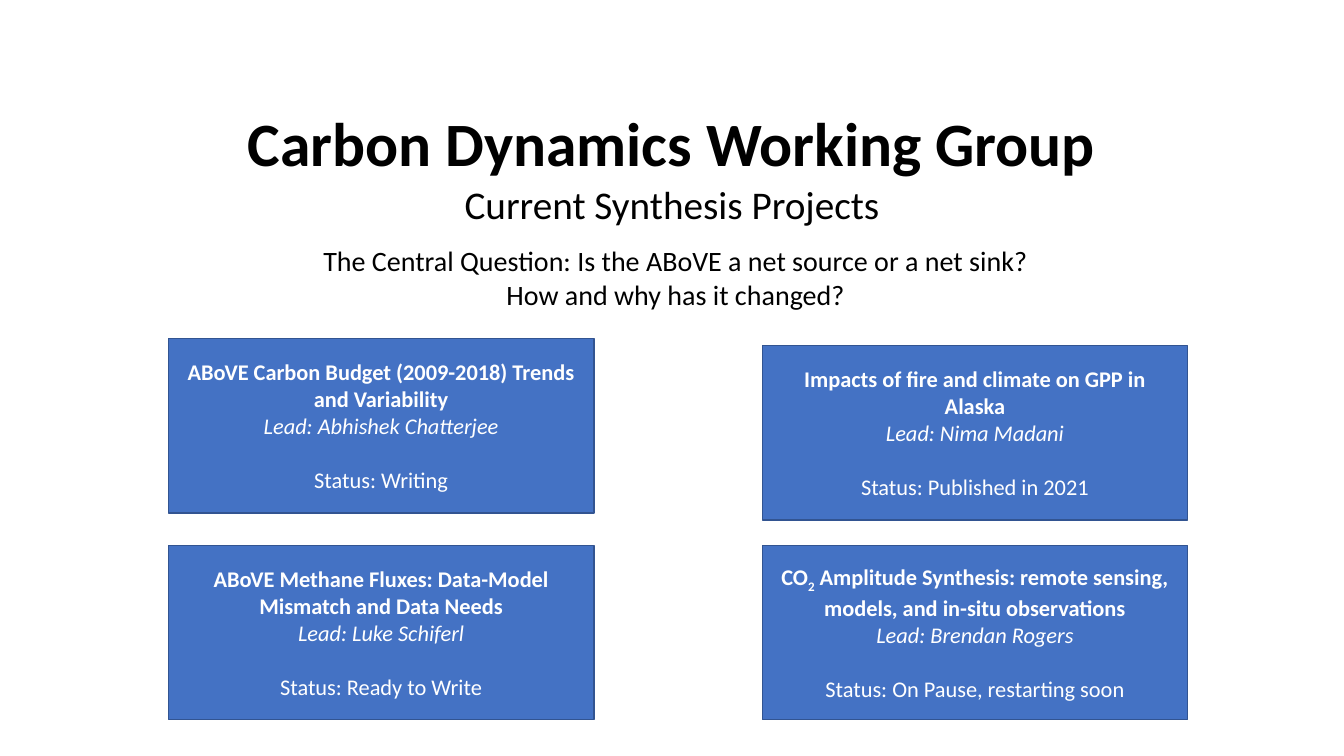
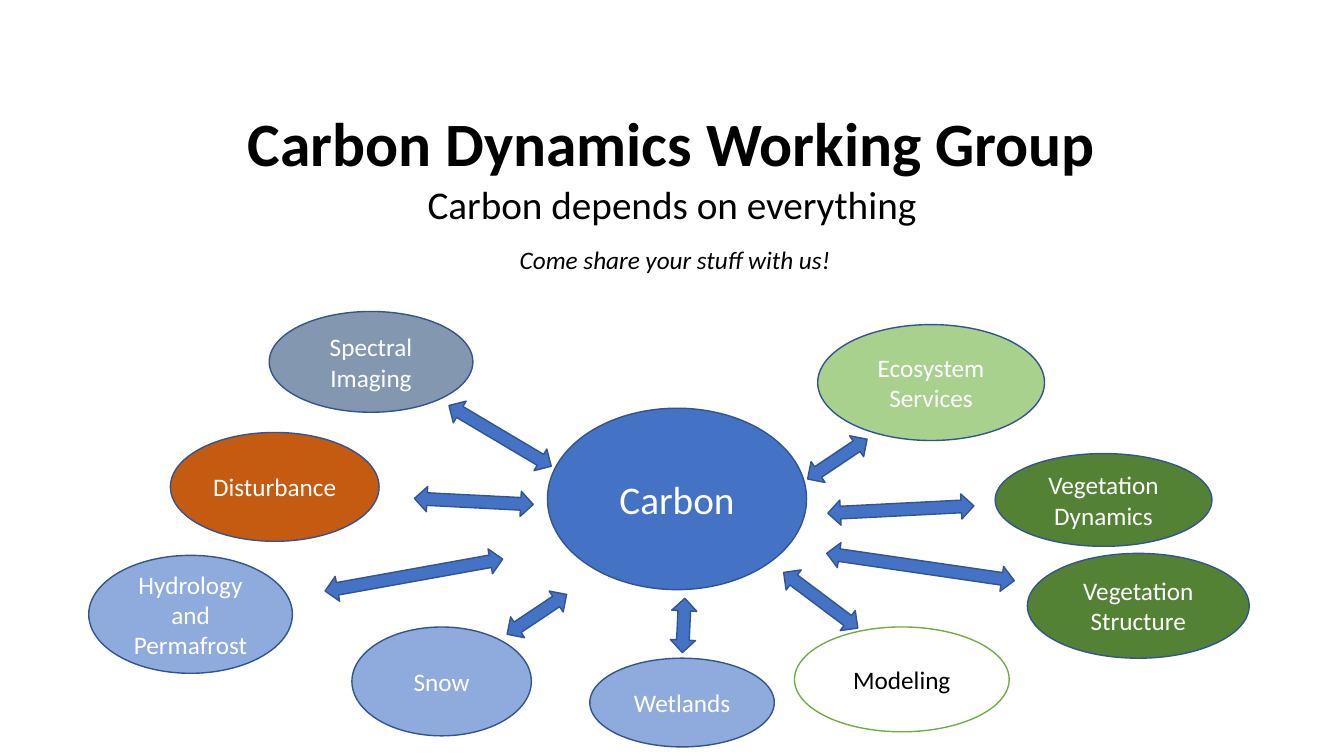
from pptx import Presentation
from pptx import util as u
from pptx.dml.color import RGBColor
from pptx.enum import shapes, text

PX = 9144
BLUE, OUTLINE, WHITE, BLACK = "4472C4", "325491", "FFFFFF", "000000"
PALE_BLUE, GREEN = "8FAADC", "548235"
KIND = shapes.MSO_SHAPE


def add_block(slide, kind, box, fill, line=OUTLINE, angle=0):
    shape = slide.shapes.add_shape(kind, *[value * PX for value in box])
    shape.shadow.inherit = False
    shape.rotation = angle
    shape.fill.solid()
    shape.fill.fore_color.rgb = RGBColor.from_string(fill)
    shape.line.color.rgb = RGBColor.from_string(line)
    shape.line.width = u.Pt(1)
    return shape


def write(shape, lines, size, color, anchor=text.MSO_ANCHOR.MIDDLE, wrap=True, **common):
    frame = shape.text_frame
    frame.word_wrap = wrap
    frame.auto_size = text.MSO_AUTO_SIZE.NONE
    frame.vertical_anchor = anchor
    for index, (words, style) in enumerate(lines):
        paragraph = frame.paragraphs[0] if index == 0 else frame.add_paragraph()
        formats = {"alignment": text.PP_ALIGN.CENTER, **common, **style}
        font_formats = {"name": "Calibri", "size": u.Pt(size),
                        "bold": formats.pop("bold", False),
                        "italic": formats.pop("italic", False)}
        for name, value in formats.items():
            setattr(paragraph, name, value)
        for position, piece in enumerate(words.split("_")):
            run = paragraph.add_run()
            run.text = piece
            for name, value in font_formats.items():
                setattr(run.font, name, value)
            run.font.color.rgb = RGBColor.from_string(color)
            if position % 2:
                run._r.get_or_add_rPr().set("baseline", "-25000")


presentation = Presentation()
presentation.slide_width = 1333 * PX
presentation.slide_height = 750 * PX

headers = [
    ("Current Synthesis Projects", (304, 237, 732, 77), 20, False,
     ["The Central Question: Is the ABoVE a net source or a net sink?",
      "How and why has it changed?"]),
    ("Carbon depends on everything", (502, 237, 335, 71), 18, True,
     ["Come share your stuff with us!"]),
]
slides = []
for subtitle, box, size, italic, lines in headers:
    slide = presentation.slides.add_slide(presentation.slide_layouts[5])
    title = slide.shapes.title
    for name, value in zip(("left", "top", "width", "height"), (67, 107, 1199, 86)):
        setattr(title, name, value * PX)
    write(title, [("Carbon Dynamics Working Group", {"bold": True})], 44, BLACK,
          text.MSO_ANCHOR.TOP, line_spacing=0.9)
    subtitle_box = slide.shapes.add_textbox(67 * PX, 179 * PX, 1199 * PX, 51 * PX)
    write(subtitle_box, [(subtitle, {})], 28, BLACK, text.MSO_ANCHOR.TOP, line_spacing=0.9)
    message_box = slide.shapes.add_textbox(*[value * PX for value in box])
    write(message_box, [(line, {"italic": italic}) for line in lines], size, BLACK,
          text.MSO_ANCHOR.TOP, wrap=False)
    slides.append(slide)
projects_slide, links_slide = slides

projects = [
    (167, 336, "ABoVE Carbon Budget (2009-2018) Trends and Variability",
     "Abhishek Chatterjee", "Writing"),
    (756, 343, "Impacts of fire and climate on GPP in Alaska",
     "Nima Madani", "Published in 2021"),
    (167, 541, "ABoVE Methane Fluxes: Data-Model Mismatch and Data Needs",
     "Luke Schiferl", "Ready to Write"),
    (756, 541, "CO_2_ Amplitude Synthesis: remote sensing, models, and in-situ observations",
     "Brendan Rogers", "On Pause, restarting soon"),
]
for left, top, heading, lead, status in projects:
    card = add_block(projects_slide, KIND.RECTANGLE, (left, top, 422, 173), BLUE)
    write(card, [(heading, {"bold": True}),
                 (f"Lead: {lead}", {"italic": True}),
                 (f"Status: {status}", {"space_before": u.Pt(19.5)})], 16, WHITE)

topics = [
    ("Carbon", (543, 405, 257, 180), BLUE, OUTLINE, WHITE, 28),
    ("Ecosystem Services", (811, 322, 225, 115), "A9D18E", OUTLINE, WHITE, 18),
    ("Disturbance", (169, 429, 207, 108), "C55A11", OUTLINE, WHITE, 18),
    ("Hydrology and Permafrost", (88, 551, 202, 117), PALE_BLUE, OUTLINE, WHITE, 18),
    ("Modeling", (788, 622, 213, 104), WHITE, "70AD47", BLACK, 18),
    ("Snow", (349, 622, 178, 108), PALE_BLUE, OUTLINE, WHITE, 18),
    ("Vegetation Dynamics", (987, 450, 215, 92), GREEN, OUTLINE, WHITE, 18),
    ("Vegetation Structure", (1019, 549, 220, 104), GREEN, OUTLINE, WHITE, 18),
    ("Wetlands", (585, 653, 183, 88), PALE_BLUE, OUTLINE, WHITE, 18),
    ("Spectral Imaging", (267, 309, 202, 100), "8497B0", OUTLINE, WHITE, 18),
]
for label, box, fill, line, color, size in topics:
    write(add_block(links_slide, KIND.OVAL, box, fill, line), [(label, {})], size, color)

arrows = [
    (437, 420, 118, 30.7), (411, 485, 118, 2.9), (321, 558, 179, 349.8),
    (497, 597, 71, 326.2), (795, 443, 71, 326.2), (821, 493, 145, 357.1),
    (819, 550, 188, 8.3), (768, 583, 92, 36.9), (651, 608, 54, 92.6),
]
for left, top, length, angle in arrows:
    add_block(links_slide, KIND.LEFT_RIGHT_ARROW, (left, top, length, 25), BLUE, angle=angle)

presentation.save("out.pptx")
